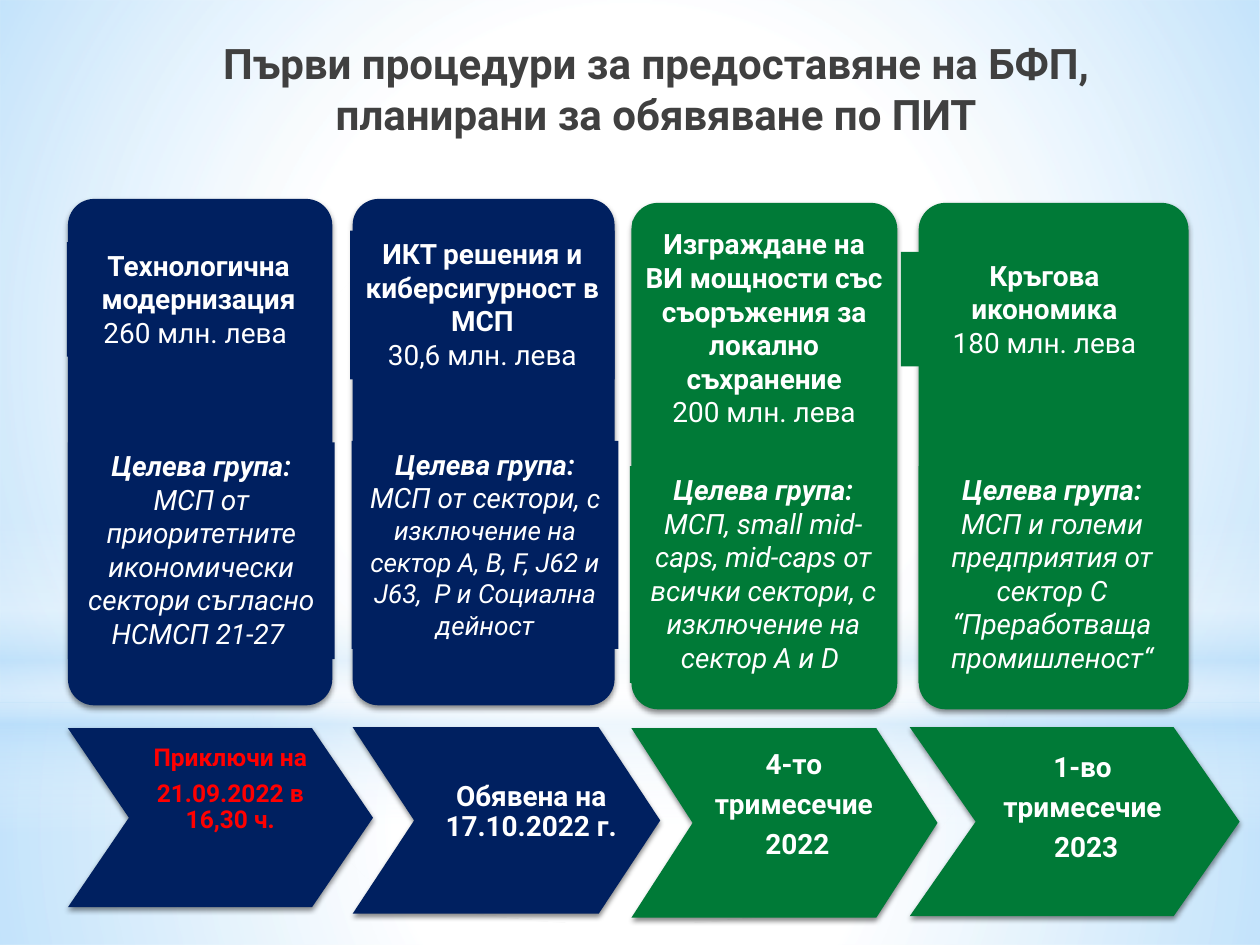
from lxml import etree
from pptx import Presentation
from pptx.dml.color import RGBColor
from pptx.enum import shapes, text
from pptx.oxml import ns
from pptx.util import Cm, Pt

NAVY, GREEN, WHITE, RED, GREY = "002060", "007A37", "FFFFFF", "FF0000", "404040"
SKY = "B4DCFA"
FONT = "Roboto"
WIDTH, HEIGHT = 25.4, 19.05
SHAPE = shapes.MSO_SHAPE

BACKDROP = [
    (SHAPE.RECTANGLE, (0, 14.17, WIDTH, 4.88), True,
     [(0, WHITE, 91), (37, WHITE, 76), (100, SKY, 79)]),
    (SHAPE.RECTANGLE, (0, 0, WIDTH, 14.17), True,
     [(0, WHITE, 89), (48, WHITE, 62), (100, SKY, 79)]),
    (SHAPE.RECTANGLE, (0, 10.46, WIDTH, 6.35), False,
     [(0, WHITE, 0), (29, WHITE, 30), (45, SKY, 40), (55, WHITE, 26), (65, SKY, 60), (100, WHITE, 0)]),
    (SHAPE.OVAL, (0, 4.45, WIDTH, 14.17), True, [(0, WHITE, 100), (56, WHITE, 0)]),
]
TITLE = "Първи процедури за предоставяне на БФП, планирани за обявяване по ПИТ"
TARGET = "Целева група:"

PROCEDURES = [
    dict(color=NAVY, card=(1.37, 4.01, 5.33, 10.21), arrow=(1.37, 14.68, 6.15, 3.61),
         head=("Технологична модернизация", "260 млн. лева "), head_box=(1.35, 4.88, 5.31, 2.31),
         group=[("МСП от приоритетните икономически сектори съгласно НСМСП 21-27 ", 16)],
         group_box=(1.37, 8.92, 5.38, 4.37),
         date=["Приключи на", "21.09.2022 в 16,30 ч."], date_box=(2.64, 14.91, 4.01, 3.05),
         date_format=dict(size=14, color=RED)),
    dict(color=NAVY, card=(7.11, 4.01, 5.28, 10.21), arrow=(7.11, 14.66, 6.2, 3.76),
         head=("ИКТ решения и киберсигурност в МСП", "30,6 млн. лева"), head_box=(7.06, 4.65, 5.33, 3),
         group=[("МСП от сектори, ", 16),
                ("с изключение на сектор А, В, F, J62 и J63,  P и Социална дейност", 15)],
         group_box=(7.09, 8.89, 5.38, 4.19),
         date=["Обявена на 17.10.2022 г."], date_box=(8.41, 15.65, 4.6, 1.5), date_format={}),
    dict(color=GREEN, card=(12.73, 4.09, 5.36, 10.21), arrow=(12.73, 14.68, 6.17, 3.82),
         head=("Изграждане на ВИ мощности със съоръжения за локално съхранение", "200 млн. лева"),
         head_box=(12.75, 4.45, 5.31, 4.37),
         group=[("МСП, small mid-caps, mid-caps от всички сектори, с изключение на сектор А и D ", 16)],
         group_box=(12.7, 9.4, 5.38, 4.37),
         date=["4-то ", "тримесечие ", "2022"], date_box=(14.07, 15.01, 4.01, 3.71), date_format={}),
    dict(color=GREEN, card=(18.52, 4.09, 5.44, 10.21), arrow=(18.34, 14.66, 6.65, 3.81),
         head=("Кръгова икономика", "180 млн. лева"), head_box=(18.16, 5.08, 5.79, 2.31),
         group=[("МСП и големи предприятия от сектор C “Преработваща промишленост“", 16)],
         group_box=(18.52, 9.4, 5.38, 4.37),
         date=["1-во ", "тримесечие ", "2023"], date_box=(19.89, 15.06, 4.01, 3.71), date_format={}),
]


def rgb(value):
    return RGBColor.from_string(value)


def node(parent, tag, **attrs):
    child = etree.SubElement(parent, ns.qn("a:" + tag))
    for key, value in attrs.items():
        child.set(key, str(value))
    return child


def color_node(parent, color, opacity):
    node(node(parent, "srgbClr", val=color), "alpha", val=opacity * 1000)


def add_shape(s, kind, box, color):
    sp = s.shapes.add_shape(kind, *map(Cm, box))
    sp.shadow.inherit = False
    sp.fill.solid()
    sp.fill.fore_color.rgb = rgb(color)
    sp.line.fill.background()
    return sp


def set_gradient(sp, stops, radial):
    solid = sp.element.spPr.find(ns.qn("a:solidFill"))
    grad = etree.Element(ns.qn("a:gradFill"), rotWithShape="1")
    stop_list = node(grad, "gsLst")
    for pos, color, opacity in stops:
        color_node(node(stop_list, "gs", pos=pos * 1000), color, opacity)
    if radial:
        center = dict.fromkeys("ltrb", 50000)
        node(node(grad, "path", path="circle"), "fillToRect", **center)
    else:
        node(grad, "lin", ang=5400000, scaled=0)
    sp.element.spPr.replace(solid, grad)


def add_shadow(sp):
    effects = sp.element.spPr.find(ns.qn("a:effectLst"))
    shadow = node(effects, "outerShdw", blurRad=Pt(3.1), dist=Pt(1.8), dir=5400000, rotWithShape=0)
    color_node(shadow, "000000", 45)


def add_run(p, content, size=16, color=WHITE, bold=False, italic=False):
    r = p.add_run()
    r.text = content
    r.font.name = FONT
    r.font.size = Pt(size)
    r.font.bold = bold
    r.font.italic = italic
    r.font.color.rgb = rgb(color)


def add_text(s, box, paragraphs, line_spacing=None, space_after=None):
    tf = s.shapes.add_textbox(*map(Cm, box)).text_frame
    tf.word_wrap = True
    tf.vertical_anchor = text.MSO_ANCHOR.TOP
    for i, runs in enumerate(paragraphs):
        p = tf.add_paragraph() if i else tf.paragraphs[0]
        p.alignment = text.PP_ALIGN.CENTER
        p.line_spacing = line_spacing
        p.space_after = space_after
        for content, style in runs:
            add_run(p, content, **style)


def add_procedure(s, item):
    arrow = add_shape(s, SHAPE.CHEVRON, item["arrow"], item["color"])
    arrow.adjustments[0] = 0.2 * item["arrow"][2] / item["arrow"][3]
    card = add_shape(s, SHAPE.ROUNDED_RECTANGLE, item["card"], item["color"])
    card.adjustments[0] = 0.1
    for sp in (arrow, card):
        add_shadow(sp)
    for key in ("head_box", "group_box"):
        add_shape(s, SHAPE.RECTANGLE, item[key], item["color"])

    name, budget = item["head"]
    add_text(s, item["head_box"], [[(name, dict(bold=True))], [(budget, {})]])
    members = [(content, dict(size=size, italic=True)) for content, size in item["group"]]
    add_text(s, item["group_box"], [[(TARGET, dict(bold=True, italic=True))], members])
    style = dict(size=16, bold=True) | item["date_format"]
    add_text(s, item["date_box"], [[(line, style)] for line in item["date"]],
             line_spacing=0.9, space_after=Pt(0.35 * style["size"]))


def main():
    prs = Presentation()
    prs.slide_width, prs.slide_height = Cm(WIDTH), Cm(HEIGHT)
    s = prs.slides.add_slide(prs.slide_layouts[6])
    s.background.fill.solid()
    s.background.fill.fore_color.rgb = rgb(WHITE)
    for kind, box, radial, stops in BACKDROP:
        set_gradient(add_shape(s, kind, box, WHITE), stops, radial)
    add_text(s, (2.97, 0.64, 20.52, 1.78), [[(TITLE, dict(size=24, color=GREY, bold=True))]])
    for item in PROCEDURES:
        add_procedure(s, item)
    prs.save("out.pptx")


if __name__ == "__main__":
    main()
